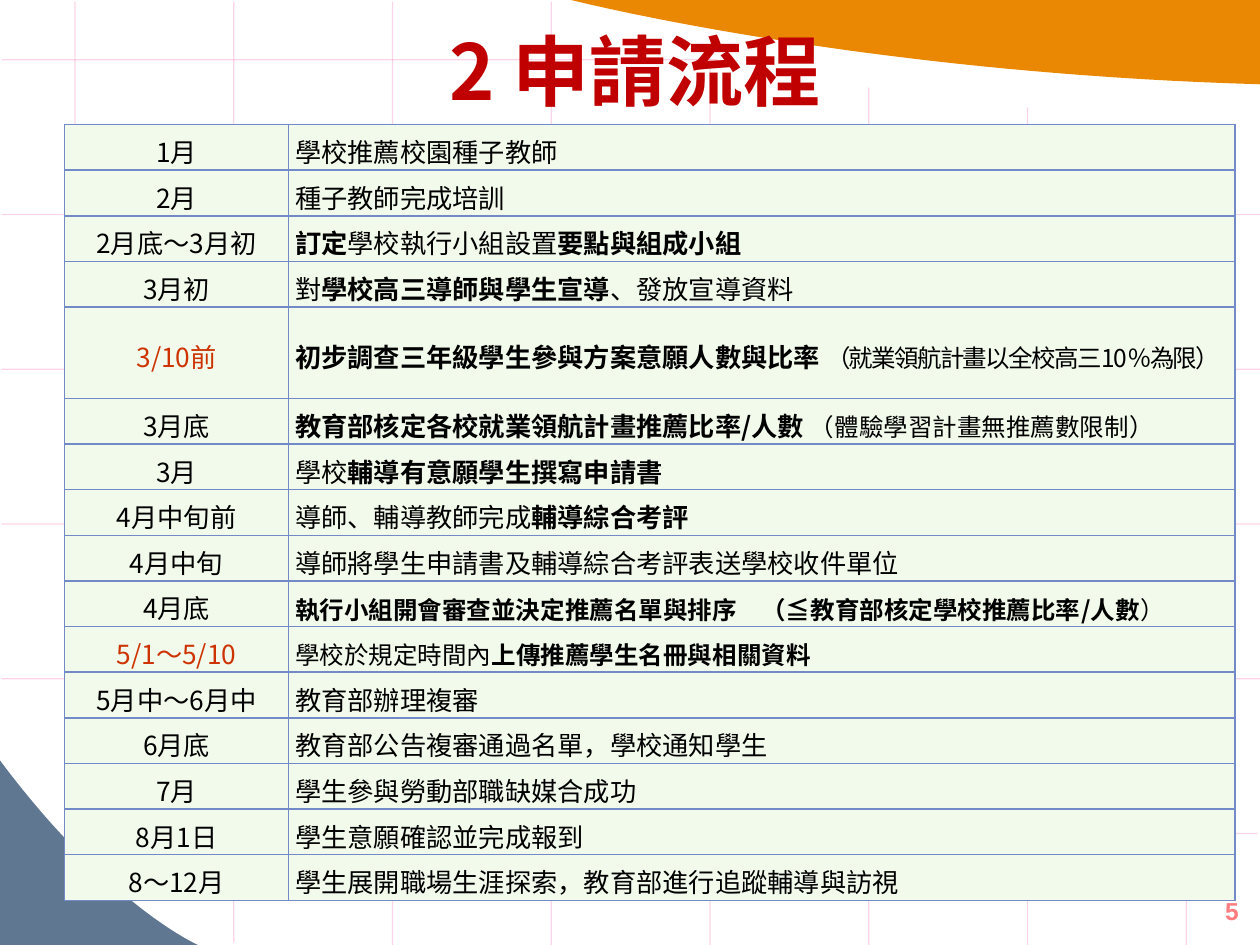
from dataclasses import dataclass

from lxml import etree
from pptx import Presentation
from pptx.dml.color import RGBColor
from pptx.enum.shapes import MSO_CONNECTOR, MSO_SHAPE
from pptx.enum.text import MSO_ANCHOR, PP_ALIGN
from pptx.oxml.ns import qn
from pptx.util import Cm, Pt

STRAIGHT = MSO_CONNECTOR.STRAIGHT
RECTANGLE = MSO_SHAPE.RECTANGLE
MIDDLE = MSO_ANCHOR.MIDDLE
LEFT, CENTER, RIGHT = PP_ALIGN.LEFT, PP_ALIGN.CENTER, PP_ALIGN.RIGHT

SLIDE_WIDTH, SLIDE_HEIGHT = 25.4, 19.05
GRID_LEFT, GRID_TOP = 1.48, 1.17
COLUMN_STEP, ROW_STEP = 3.2, 3.12
COLUMN_SPANS = [(0, 16.41), (0, 18.97), (0, 19.05), (0, 19.1),
                (1.07, 19.1), (1.73, 19.1), (2.13, 19.1), (2.51, 19.1)]
ROW_SPANS = [(14.43, 0)] + [(25.43, 0)] * 4 + [(25.32, 1.93)]
PALE_TILES = [(3, 2, 25), (6, 4, 30), (0, 3, 20), (5, 5, 20),
              (2, -1, 40), (2, 4, 30), (5, 1, 30)]
ROW_HEIGHT = 0.92


@dataclass(frozen=True)
class Theme:
    font: str = "Noto Sans CJK SC"
    number_font: str = "Arial"
    white: str = "FFFFFF"
    grid_shadow: str = "EA157A"
    slate: str = "5F7791"
    orange: str = "EB8803"
    title: str = "C00000"
    number: str = "FF7C80"
    text: str = "000000"
    deadline: str = "CC3300"
    cell: str = "F2FAEC"
    border: str = "738AC8"
    title_size: int = 44
    text_size: int = 15
    small_size: int = 14
    line_spacing: int = 26


@dataclass(frozen=True)
class Span:
    text: str
    bold: bool = False
    small: bool = False
    tight: bool = False


def strong(text, small=False):
    return Span(text, bold=True, small=small)


def small(text, tight=False):
    return Span(text, small=True, tight=tight)


SCHEDULE = [
    ("1月", [Span("學校推薦校園種子教師")]),
    ("2月", [Span("種子教師完成培訓")]),
    ("2月底～3月初", [strong("訂定"), Span("學校執行小組設置"), strong("要點與組成小組")]),
    ("3月初", [Span("對"), strong("學校高三導師與學生宣導"), Span("、發放宣導資料")]),
    ("3/10前", [strong("初步調查三年級學生參與方案意願人數與比率 "),
               small("（就業領航計畫以全校高三10％為限）", tight=True)]),
    ("3月底", [strong("教育部核定各校就業領航計畫推薦比率/人數 "),
             small("（體驗學習計畫無推薦數限制）")]),
    ("3月", [Span("學校"), strong("輔導有意願學生撰寫申請書")]),
    ("4月中旬前", [Span("導師、輔導教師完成"), strong("輔導綜合考評")]),
    ("4月中旬", [Span("導師將學生申請書及輔導綜合考評表送學校收件單位")]),
    ("4月底", [strong("執行小組開會審查並決定推薦名單與排序　（≦教育部核定學校推薦比率/人數", small=True),
             small("）")]),
    ("5/1～5/10", [small("學校於規定時間內"), strong("上傳推薦學生名冊與相關資料", small=True)]),
    ("5月中～6月中", [Span("教育部辦理複審")]),
    ("6月底", [Span("教育部公告複審通過名單，學校通知學生")]),
    ("7月", [Span("學生參與勞動部職缺媒合成功")]),
    ("8月1日", [Span("學生意願確認並完成報到")]),
    ("8～12月", [Span("學生展開職場生涯探索，教育部進行追蹤輔導與訪視")]),
]
DEADLINES = {"3/10前", "5/1～5/10"}
TWO_LINE_ROW = 4


def bezier(start, first, second, end, steps=40):
    points = []
    for step in range(steps + 1):
        t = step / steps
        weights = ((1 - t) ** 3, 3 * t * (1 - t) ** 2, 3 * t * t * (1 - t), t ** 3)
        points.append(tuple(sum(w * p[axis] for w, p in zip(weights, (start, first, second, end)))
                            for axis in (0, 1)))
    return points


class SlideBuilder:
    def __init__(self, slide, theme):
        self.slide = slide
        self.shapes = slide.shapes
        self.theme = theme

    def set_alpha(self, shape, percent):
        color = next(shape._element.spPr.iter(qn("a:srgbClr")))
        etree.SubElement(color, qn("a:alpha"), val=str(percent * 1000))

    def paint(self, shape, color):
        shape.shadow.inherit = False
        shape.fill.solid()
        shape.fill.fore_color.rgb = RGBColor.from_string(color)
        shape.line.fill.background()

    def grid_line(self, x1, y1, x2, y2):
        line = self.shapes.add_connector(STRAIGHT, Cm(x1), Cm(y1), Cm(x2), Cm(y2))
        line.line.color.rgb = RGBColor.from_string(self.theme.white)
        line.line.width = Pt(0.75)
        self.set_alpha(line, 50)
        effects = etree.SubElement(line._element.spPr, qn("a:effectLst"))
        shadow = etree.SubElement(effects, qn("a:outerShdw"), blurRad="0", dist=str(Pt(1.4)),
                                  dir="2700000", algn="tl", rotWithShape="0")
        color = etree.SubElement(shadow, qn("a:srgbClr"), val=self.theme.grid_shadow)
        etree.SubElement(color, qn("a:alpha"), val="35000")

    def tile(self, column, row, opacity):
        x = GRID_LEFT + column * COLUMN_STEP + 0.05
        y = GRID_TOP + row * ROW_STEP + 0.07
        top, bottom = max(y, 0), min(y + 3, SLIDE_HEIGHT)
        shape = self.shapes.add_shape(RECTANGLE, Cm(x), Cm(top), Cm(3.12), Cm(bottom - top))
        self.paint(shape, self.theme.white)
        self.set_alpha(shape, opacity)

    def outline(self, points, color):
        corners = [(Cm(x), Cm(y)) for x, y in points]
        builder = self.shapes.build_freeform(*corners[0])
        builder.add_line_segments(corners[1:], close=True)
        self.paint(builder.convert_to_shape(), color)

    def run(self, paragraph, text, size, color, bold=False, font=None):
        run = paragraph.add_run()
        run.text = text
        run.font.size = Pt(size)
        run.font.bold = bold
        run.font.color.rgb = RGBColor.from_string(color)
        run.font.name = font or self.theme.font
        etree.SubElement(run.font._element, qn("a:ea"), typeface=run.font.name)
        return run

    def title(self, text):
        shape = self.shapes.title
        self.shapes._spTree.append(shape._element)
        shape.left, shape.top, shape.width, shape.height = Cm(1.37), Cm(0.13), Cm(22.86), Cm(2.57)
        shape.text_frame.vertical_anchor = MIDDLE
        paragraph = shape.text_frame.paragraphs[0]
        paragraph.alignment = CENTER
        self.run(paragraph, text, self.theme.title_size, self.theme.title, bold=True)

    def page_number(self, text):
        shape = self.shapes.add_textbox(Cm(19.3), Cm(17.93), Cm(5.92), Cm(0.91))
        shape.text_frame.word_wrap = True
        paragraph = shape.text_frame.paragraphs[0]
        paragraph.alignment = RIGHT
        self.run(paragraph, text, self.theme.small_size, self.theme.number, True,
                 self.theme.number_font)

    def cell(self, cell, spans, alignment, color):
        cell.margin_left = cell.margin_right = Cm(0.13)
        cell.margin_top = cell.margin_bottom = 0
        cell.vertical_anchor = MIDDLE
        properties = cell._tc.get_or_add_tcPr()
        for side in ("a:lnL", "a:lnR", "a:lnT", "a:lnB"):
            border = etree.SubElement(properties, qn(side), w=str(Pt(1)))
            fill = etree.SubElement(border, qn("a:solidFill"))
            etree.SubElement(fill, qn("a:srgbClr"), val=self.theme.border)
        cell.fill.solid()
        cell.fill.fore_color.rgb = RGBColor.from_string(self.theme.cell)
        paragraph = cell.text_frame.paragraphs[0]
        paragraph.alignment = alignment
        paragraph.line_spacing = Pt(self.theme.line_spacing)
        for span in spans:
            size = self.theme.small_size if span.small else self.theme.text_size
            run = self.run(paragraph, span.text, size, color, span.bold)
            if span.tight:
                run.font._element.set("spc", "-100")

    def schedule(self, rows):
        frame = self.shapes.add_table(len(rows), 2, Cm(1.3), Cm(2.51), Cm(23.6),
                                      Cm(ROW_HEIGHT * (len(rows) + 1)))
        table = frame.table
        table.first_row = table.horz_banding = False
        table.columns[0].width, table.columns[1].width = Cm(4.52), Cm(19.08)
        for index, (date, spans) in enumerate(rows):
            lines = 2 if index == TWO_LINE_ROW else 1
            table.rows[index].height = Cm(ROW_HEIGHT * lines)
            date_color = self.theme.deadline if date in DEADLINES else self.theme.text
            self.cell(table.cell(index, 0), [Span(date)], CENTER, date_color)
            self.cell(table.cell(index, 1), spans, LEFT, self.theme.text)


def main():
    presentation = Presentation()
    presentation.slide_width, presentation.slide_height = Cm(SLIDE_WIDTH), Cm(SLIDE_HEIGHT)
    theme = Theme()
    builder = SlideBuilder(presentation.slides.add_slide(presentation.slide_layouts[5]), theme)
    lower_curve = bezier((3.99, 19.05), (3.99, 19.05), (2.18, 18.26), (-0.03, 15.29))
    builder.outline(lower_curve + [(-0.03, 19.05)], theme.slate)
    for index, (top, bottom) in enumerate(COLUMN_SPANS):
        x = GRID_LEFT + index * COLUMN_STEP
        builder.grid_line(x, top, x, bottom)
    for index, (right, left) in enumerate(ROW_SPANS):
        y = GRID_TOP + index * ROW_STEP
        builder.grid_line(right, y, left, y)
    for tile in PALE_TILES:
        builder.tile(*tile)
    upper_curve = bezier((11.51, 0), (11.51, 0), (17.27, 1.47), (25.4, 1.7))
    builder.outline(upper_curve + [(25.4, 0)], theme.orange)
    builder.title("2 申請流程")
    builder.page_number("5")
    builder.schedule(SCHEDULE)
    presentation.save("out.pptx")


if __name__ == "__main__":
    main()
